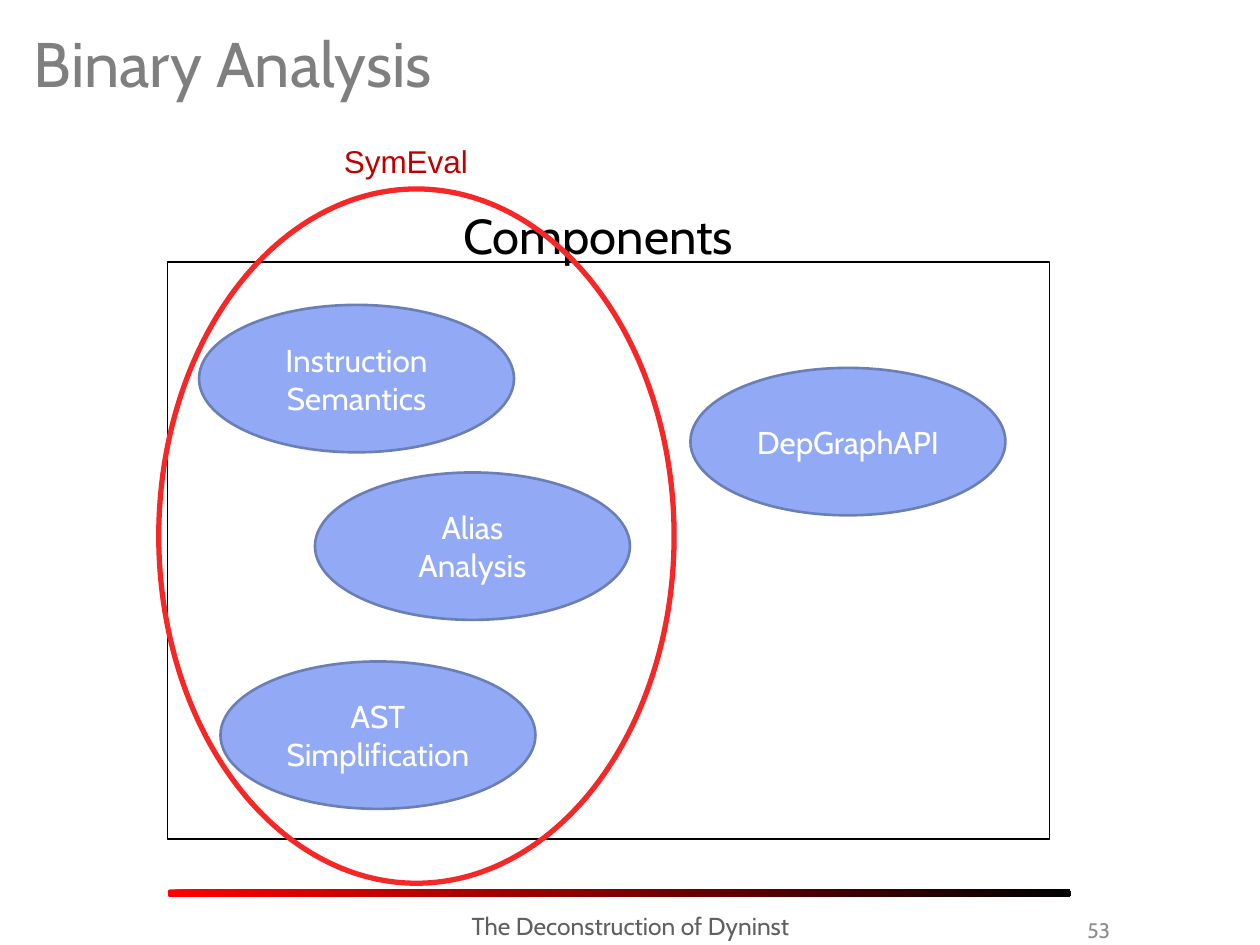
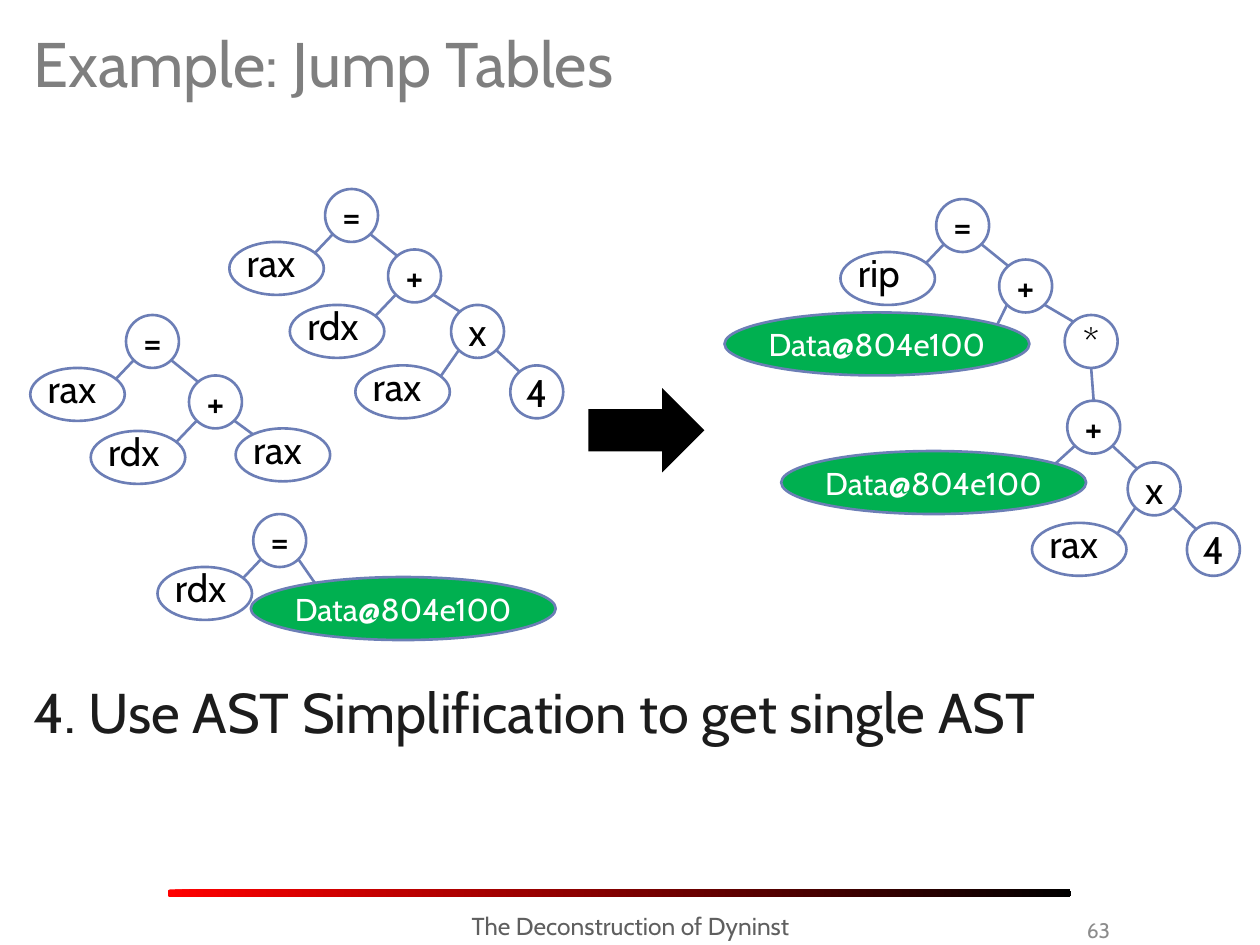
from dataclasses import dataclass

from lxml import etree
from pptx import Presentation
from pptx import util as u
from pptx.dml.color import RGBColor
from pptx.enum import shapes, text
from pptx.oxml.ns import qn

COLORS = {
    "title": "7F7F7F", "footer": "5F5F5F", "number": "8C8C8C", "body": "1C1C1C",
    "black": "000000", "white": "FFFFFF", "band": "FF0000",
    "component": "92AAF6", "outline": "6C7EB6", "group": "F62727",
    "group name": "C00000", "data": "00B050",
}
SHAPE = shapes.MSO_SHAPE
LEFT, CENTER, RIGHT = text.PP_ALIGN.LEFT, text.PP_ALIGN.CENTER, text.PP_ALIGN.RIGHT
TOP, MIDDLE = text.MSO_ANCHOR.TOP, text.MSO_ANCHOR.MIDDLE

REGISTER_SIZE = (0.75, 0.42)
OPERATOR_SIZE = (0.42, 0.42)
DATA_SIZE = (2.42, 0.5)
# Where an edge leaves its parent and meets its child, as shares of their boxes
LEFT_EDGE = ((0.15, 0.85), (0.89, 0.24))
RIGHT_EDGE = ((0.85, 0.85), (0.22, 0.16))
ONLY_EDGE = ((0.5, 1), (0.5, 0))


@dataclass
class Node:
    """A syntax tree node, placed relative to its parent's corner."""
    label: str
    dx: float
    dy: float
    children: tuple = ()

    @property
    def is_data(self):
        return self.label.startswith("Data")

    @property
    def is_register(self):
        return self.label.startswith("r")

    @property
    def size(self):
        if self.is_data:
            return DATA_SIZE
        return REGISTER_SIZE if self.is_register else OPERATOR_SIZE


def rgb(name):
    return RGBColor.from_string(COLORS[name])


def inches(*lengths):
    return [u.Inches(length) for length in lengths]


class Deck:
    font = "Cabin"

    def __init__(self):
        self.prs = Presentation()
        self.prs.slide_width, self.prs.slide_height = inches(10, 7.5)
        self.slide = None

    def add_slide(self, title, number):
        self.slide = self.prs.slides.add_slide(self.prs.slide_layouts[6])
        band = self.shape(SHAPE.ROUNDED_RECTANGLE, (1.33, 7.06, 7.17, 0.06))
        band.adjustments[0] = 0.33
        band.fill.gradient()
        band.fill.gradient_angle = 0
        for stop, color in zip(band.fill.gradient_stops, ("band", "black")):
            stop.color.rgb = rgb(color)
        self.text((0.17, 0.08, 9.67, 0.83), title, 36, "title", anchor=MIDDLE)
        self.text((7.58, 7.18, 1.33, 0.4), number, 12, "number", RIGHT, MIDDLE)
        self.text((2.42, 7.18, 5.17, 0.4), "The Deconstruction of Dyninst",
                  14, "footer", CENTER)

    def label(self, shape, words, size, color, align=LEFT, anchor=TOP,
              wrap=True, font=None):
        frame = shape.text_frame
        frame.text = words
        frame.word_wrap = wrap
        frame.vertical_anchor = anchor
        for paragraph in frame.paragraphs:
            paragraph.alignment = align
            for run in paragraph.runs:
                run.font.name = font or self.font
                run.font.size = u.Pt(size)
                run.font.color.rgb = rgb(color)
        return shape

    def text(self, box, *args, **style):
        return self.label(self.slide.shapes.add_textbox(*inches(*box)), *args, **style)

    def shape(self, kind, box, fill=None, line=None, width=1.5):
        shape = self.slide.shapes.add_shape(kind, *inches(*box))
        shape.shadow.inherit = False
        if fill:
            shape.fill.solid()
            shape.fill.fore_color.rgb = rgb(fill)
        else:
            shape.fill.background()
        if line:
            shape.line.color.rgb = rgb(line)
            shape.line.width = u.Pt(width)
        else:
            shape.line.fill.background()
        return shape

    def edge(self, start, end):
        edge = self.slide.shapes.add_connector(
            shapes.MSO_CONNECTOR.STRAIGHT, *inches(*start, *end))
        edge.line.color.rgb = rgb("outline")
        edge.line.width = u.Pt(1.5)
        etree.SubElement(edge._element.spPr, qn("a:effectLst"))

    def node(self, node, left, top):
        box = (left, top, *node.size)
        fill = "data" if node.is_data else "white"
        oval = self.shape(SHAPE.OVAL, box, fill, "outline")
        if node.is_register:
            self.text((left + 0.04, top - 0.07, 0.75, 0.47), node.label, 22, "black")
        else:
            size, color = (18, "white") if node.is_data else (22, "black")
            self.label(oval, node.label, size, color, CENTER, MIDDLE, wrap=False)

    def tree(self, node, left=0, top=0):
        """Draw each edge below the two nodes that it joins."""
        left, top = left + node.dx, top + node.dy
        edges = (LEFT_EDGE, RIGHT_EDGE) if len(node.children) == 2 else (ONLY_EDGE,)
        for child, (leave, meet) in zip(node.children, edges):
            start = (left + leave[0] * node.size[0], top + leave[1] * node.size[1])
            end = (left + child.dx + meet[0] * child.size[0],
                   top + child.dy + meet[1] * child.size[1])
            self.edge(start, end)
            self.tree(child, left, top)
        self.node(node, left, top)


def assign(target, value, left, top):
    return Node("=", left, top, (Node(target, -0.76, 0.42), value))


def add(first, second):
    return Node("+", 0.5, 0.48, (first, second))


def times_four(dx, dy):
    return Node("x", dx, dy, (Node("rax", -0.76, 0.48), Node("4", 0.47, 0.48)))


def data(dx, dy):
    return Node("Data@804e100", dx, dy)


def binary_analysis(deck):
    deck.add_slide("Binary Analysis", "53")
    components = (("Instruction\vSemantics", 1.58, 2.42), ("Alias\vAnalysis", 2.5, 3.75),
                  ("DepGraphAPI", 5.48, 2.92), ("AST Simplification", 1.75, 5.25))
    for name, left, top in components:
        oval = deck.shape(SHAPE.OVAL, (left, top, 2.5, 1.17), "component", "outline")
        deck.label(oval, name, 18, "white", CENTER, MIDDLE)
    deck.shape(SHAPE.RECTANGLE, (1.33, 2.08, 7, 4.58), line="black", width=1)
    deck.text((3.58, 1.58, 2.43, 0.57), "Components", 28, "black", wrap=False)
    deck.shape(SHAPE.OVAL, (1.26, 1.5, 4.09, 5.51), line="group", width=3)
    deck.text((2.63, 1.08, 1.42, 0.4), "SymEval", 18, "group name", font="Arial")


def jump_tables(deck):
    deck.add_slide("Example: Jump Tables", "63")
    step = deck.text((0.17, 5.33, 9.5, 1.25),
                     "4. Use AST Simplification to get single AST", 32, "body")
    hanging = step.text_frame.paragraphs[0]._p.get_or_add_pPr()
    hanging.set("marL", str(u.Inches(0.38)))
    hanging.set("indent", str(u.Inches(-0.38)))
    deck.shape(SHAPE.RIGHT_ARROW, (4.67, 3.08, 0.92, 0.67), "black")

    rdx = Node("rdx", -0.78, 0.44)
    scaled_index = Node("+", 0.02, 0.68, (data(-2.27, 0.4), times_four(0.48, 0.49)))
    dereference = Node("*", 0.52, 0.44, (scaled_index,))
    for tree in (
        assign("rax", add(rdx, times_four(0.5, 0.44)), 2.58, 1.5),
        assign("rax", add(rdx, Node("rax", 0.37, 0.42)), 1, 2.5),
        assign("rdx", data(-0.02, 0.5), 2.01, 4.08),
        assign("rip", add(data(-2.18, 0.42), dereference), 7.43, 1.58),
    ):
        deck.tree(tree)


def main():
    deck = Deck()
    binary_analysis(deck)
    jump_tables(deck)
    deck.prs.save("out.pptx")


if __name__ == "__main__":
    main()
